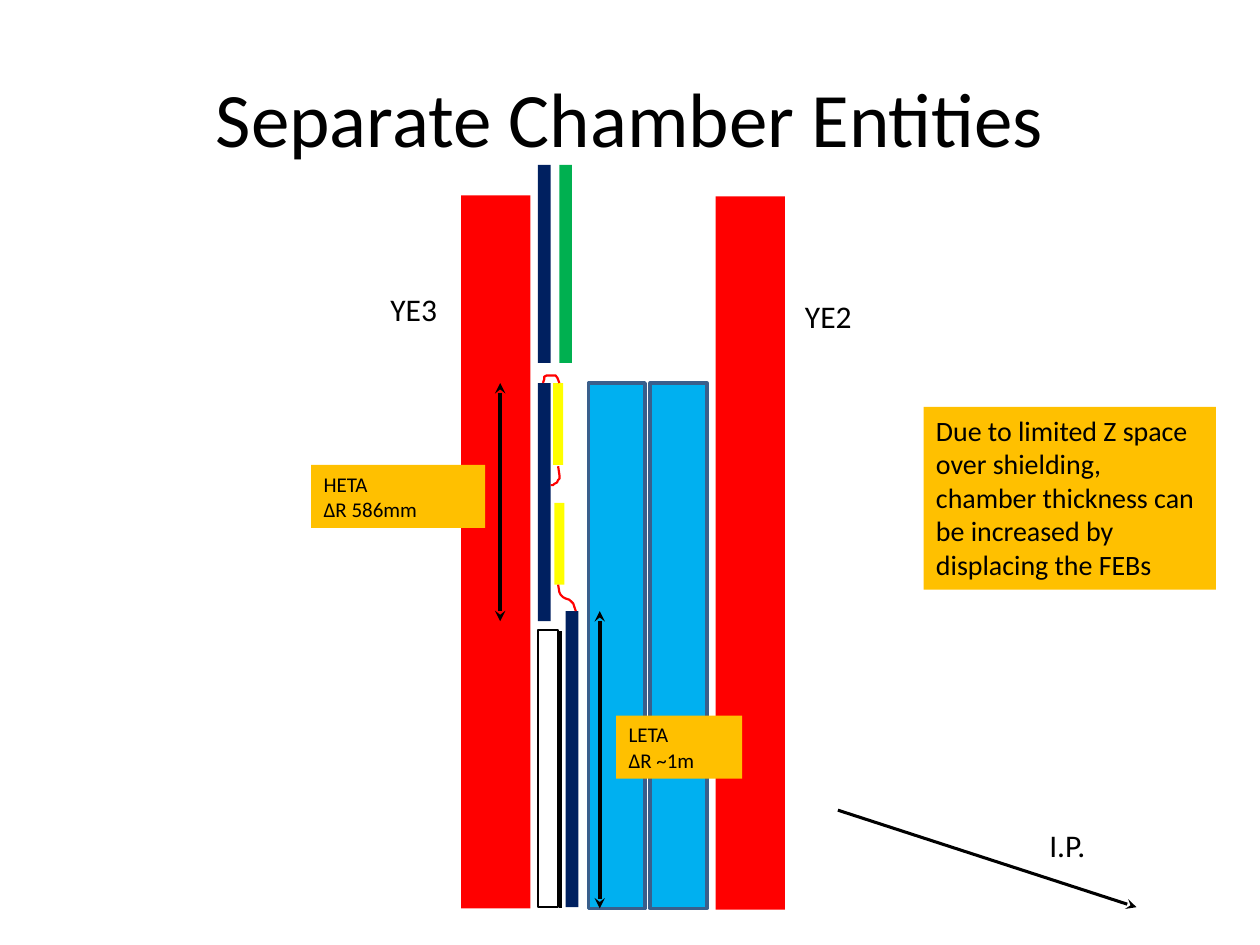
from lxml.etree import SubElement
from pptx import Presentation
from pptx.dml.color import RGBColor as Color
from pptx.enum.shapes import MSO_CONNECTOR as Connector, MSO_SHAPE as Preset
from pptx.enum.text import MSO_ANCHOR as Anchor, MSO_AUTO_SIZE as AutoSize, PP_ALIGN as Align
from pptx.oxml.ns import qn
from pptx.util import Inches, Pt

theme = {
    "font": "Calibri", "title": 44, "label": 18, "note": 16, "caption": 12,
    "black": "000000", "white": "FFFFFF", "yoke": "FF0000", "wire": "FF0000",
    "chamber": "002060", "neighbour": "00B050", "board": "FFFF00",
    "shield": "00B0F0", "shield_edge": "3A5F8C", "callout": "FFC000",
}

deck = Presentation()
deck.slide_width, deck.slide_height = Inches(10), Inches(7.5)
column, row = deck.slide_width / 100, deck.slide_height / 75
page = deck.slides.add_slide(deck.slide_layouts[5])


def grid(*cells):
    return [round(cell * (row if index % 2 else column)) for index, cell in enumerate(cells)]


def write(frame, text, size, **formats):
    for name, value in formats.items():
        setattr(frame, name, value)
    frame.text = text
    for para in frame.paragraphs:
        para.alignment = Align.CENTER if size == "title" else Align.LEFT
        for span in para.runs:
            for name, value in {"name": theme["font"], "size": Pt(theme[size])}.items():
                setattr(span.font, name, value)
            span.font.color.rgb = Color.from_string(theme["black"])


title = page.shapes.title
frame_box = dict(zip(("left", "top", "width", "height"), grid(5, 3, 90, 12.5)))
for name, value in frame_box.items():
    setattr(title, name, value)
write(title.text_frame, "Separate Chamber Entities", "title", vertical_anchor=Anchor.MIDDLE)

bars = [
    ("yoke", None, 0, (36.6, 15.5, 5.5, 56.6)),
    ("yoke", None, 0, (56.8, 15.6, 5.5, 56.6)),
    ("white", "black", 1, (42.7, 50, 1.6, 22)),
    ("shield", "shield_edge", 2, (46.7, 30.4, 4.5, 41.7)),
    ("shield", "shield_edge", 2, (51.6, 30.4, 4.5, 41.7)),
    ("chamber", None, 0, (42.7, 13.1, 1, 15.7)),
    ("neighbour", None, 0, (44.4, 13.1, 1, 15.7)),
    ("chamber", None, 0, (42.7, 30.4, 1, 18.9)),
    ("chamber", None, 0, (44.9, 48.5, 1, 23.5)),
    ("board", None, 0, (43.9, 30.4, 0.8, 6.5)),
    ("board", None, 0, (44, 39.9, 0.8, 6.5)),
]
for fill, edge, weight, cells in bars:
    bar = page.shapes.add_shape(Preset.RECTANGLE, *grid(*cells))
    bar.shadow.inherit = False
    bar.fill.solid()
    bar.fill.fore_color.rgb = Color.from_string(theme[fill])
    if edge:
        bar.line.color.rgb = Color.from_string(theme[edge])
        bar.line.width = Pt(weight)
    else:
        bar.line.fill.background()

lines = [
    ((44.5, 50.1, 44.5, 72.1), 2, ()),
    ((39.7, 30.4, 39.7, 49.3), 2, ("headEnd", "tailEnd")),
    ((47.6, 48.5, 47.6, 72.1), 2, ("headEnd", "tailEnd")),
    ((66.5, 64.3, 90.2, 72), 1.75, ("tailEnd",)),
]
for cells, weight, ends in lines:
    line = page.shapes.add_connector(Connector.STRAIGHT, *grid(*cells))
    line.line.color.rgb = Color.from_string(theme["black"])
    line.line.width = Pt(weight)
    properties = line._element.spPr
    for end in ends:
        SubElement(properties.find(qn("a:ln")), qn(f"a:{end}"), type="stealth")
    SubElement(properties, qn("a:effectLst"))

wires = [
    [(44.3, 46.4), (44.4, 47), (44.5, 47.2), (44.7, 47.4), (44.9, 47.5),
     (45.2, 47.6), (45.5, 47.9), (45.6, 48.2), (45.7, 48.5)],
    [(44.3, 37), (44.4, 37.7), (44.4, 38), (44.3, 38.1), (44.2, 38.3),
     (44, 38.4), (43.9, 38.5), (43.7, 38.5)],
    [(44.4, 30.4), (44.25, 30), (44.1, 29.8), (43.7, 29.8), (43.4, 29.8),
     (43.2, 29.9), (43.2, 30.1), (43.1, 30.4)],
]
for points in wires:
    start, *rest = [grid(*point) for point in points]
    builder = page.shapes.build_freeform(*start)
    builder.add_line_segments(rest, close=False)
    wire = builder.convert_to_shape()
    wire.shadow.inherit = False
    wire.fill.background()
    wire.line.color.rgb = Color.from_string(theme["wire"])
    wire.line.width = Pt(1.25)

labels = [
    ("YE3", "label", None, (30, 22.5, 6.3, 4)),
    ("YE2", "label", None, (62.9, 23.1, 6.3, 4)),
    ("I.P.", "label", None, (82.3, 65.1, 6.3, 4)),
    ("HETA\n∆R 586mm", "caption", "callout", (24.7, 36.9, 13.8, 5)),
    ("LETA\n∆R ~1m", "caption", "callout", (48.9, 56.8, 10, 5)),
    ("Due to limited Z space over shielding, chamber thickness can be increased "
     "by displacing the FEBs", "note", "callout", (73.3, 32.3, 23.2, 14.5)),
]
for text, size, fill, cells in labels:
    box = page.shapes.add_textbox(*grid(*cells))
    write(box.text_frame, text, size, word_wrap=True, auto_size=AutoSize.SHAPE_TO_FIT_TEXT)
    if fill:
        box.fill.solid()
        box.fill.fore_color.rgb = Color.from_string(theme[fill])

deck.save("out.pptx")
